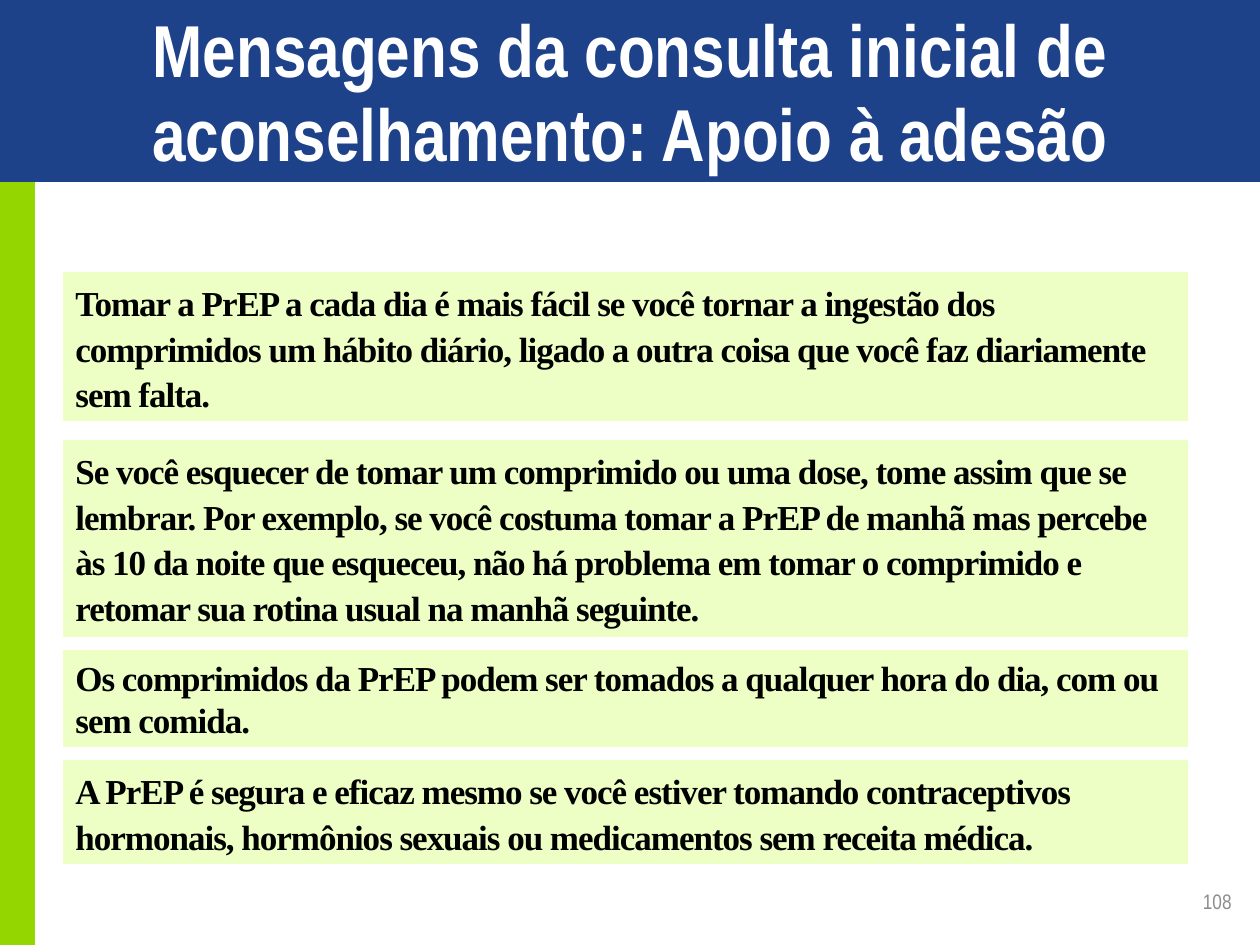
from pptx import Presentation
from pptx.dml.color import RGBColor
from pptx.enum.shapes import MSO_SHAPE
from pptx.enum.text import MSO_ANCHOR, MSO_AUTO_SIZE, PP_ALIGN
from pptx.util import Inches, Pt

TITLE = "Mensagens da consulta inicial de aconselhamento: Apoio à adesão"
NUMBER = "108"
# top, height, line spacing in points (None = single), text
NOTES = [
    (272, 149, 26, "Tomar a PrEP a cada dia é mais fácil se você tornar a ingestão dos "
     "comprimidos um hábito diário, ligado a outra coisa que você faz diariamente sem falta."),
    (440, 197, 26, "Se você esquecer de tomar um comprimido ou uma dose, tome assim que se "
     "lembrar. Por exemplo, se você costuma tomar a PrEP de manhã mas percebe às 10 da noite "
     "que esqueceu, não há problema em tomar o comprimido e retomar sua rotina usual na "
     "manhã seguinte."),
    (650, 97, None, "Os comprimidos da PrEP podem ser tomados a qualquer hora do dia, com ou "
     "sem comida."),
    (760, 104, 26, "A PrEP é segura e eficaz mesmo se você estiver tomando contraceptivos "
     "hormonais, hormônios sexuais ou medicamentos sem receita médica."),
]
COLORS = {"blue": "1E428A", "green": "94D600", "pale": "EDFFC5",
          "white": "FFFFFF", "black": "000000", "gray": "8C8C8C"}
WIDTH, HEIGHT = 1260, 945
LEFT, NOTE_WIDTH = 63, 1125
BAND, STRIPE = 182, 35


def px(n):
    return round(n * Inches(1) / 126)


def color(name):
    return RGBColor.from_string(COLORS[name])


def add_box(slide, fill, *area):
    box = slide.shapes.add_shape(MSO_SHAPE.RECTANGLE, *map(px, area))
    box.shadow.inherit = False
    box.fill.solid()
    box.fill.fore_color.rgb = color(fill)
    box.line.fill.background()
    return box


def write(shape, text, size, ink, font="Arial Narrow", bold=False, align=PP_ALIGN.LEFT,
          anchor=MSO_ANCHOR.MIDDLE, lead=None, track=0):
    """Fill a shape with one paragraph; lead and track are in points."""
    frame = shape.text_frame
    frame.word_wrap = True
    frame.auto_size = MSO_AUTO_SIZE.NONE
    frame.vertical_anchor = anchor
    para = frame.paragraphs[0]
    para.alignment = align
    if lead:
        para.line_spacing = Pt(lead)
    run = para.add_run()
    run.text = text
    run.font.name, run.font.size, run.font.bold = font, Pt(size), bold
    run.font.color.rgb = color(ink)
    if track:
        run.font._element.set("spc", str(round(track * 100)))


def main():
    deck = Presentation()
    deck.slide_width, deck.slide_height = px(WIDTH), px(HEIGHT)
    slide = deck.slides.add_slide(deck.slide_layouts[5])

    add_box(slide, "green", 0, BAND, STRIPE, HEIGHT - BAND)
    add_box(slide, "blue", 0, 0, WIDTH, BAND)

    title = slide.shapes.title
    title.left, title.top, title.width, title.height = map(px, (0, 33, WIDTH, 118))
    write(title, TITLE, 42, "white", bold=True, align=PP_ALIGN.CENTER, lead=48)
    slide.shapes._spTree.append(title._element)  # in front of the band

    for top, height, lead, text in NOTES:
        note = add_box(slide, "pale", LEFT, top, NOTE_WIDTH, height)
        write(note, text, 20, "black", font="Times New Roman", bold=True,
              anchor=MSO_ANCHOR.TOP, lead=lead, track=-0.6)

    number = slide.shapes.add_textbox(*map(px, (950, 876, 294, 50)))
    write(number, NUMBER, 12, "gray", align=PP_ALIGN.RIGHT)

    deck.save("out.pptx")


if __name__ == "__main__":
    main()
